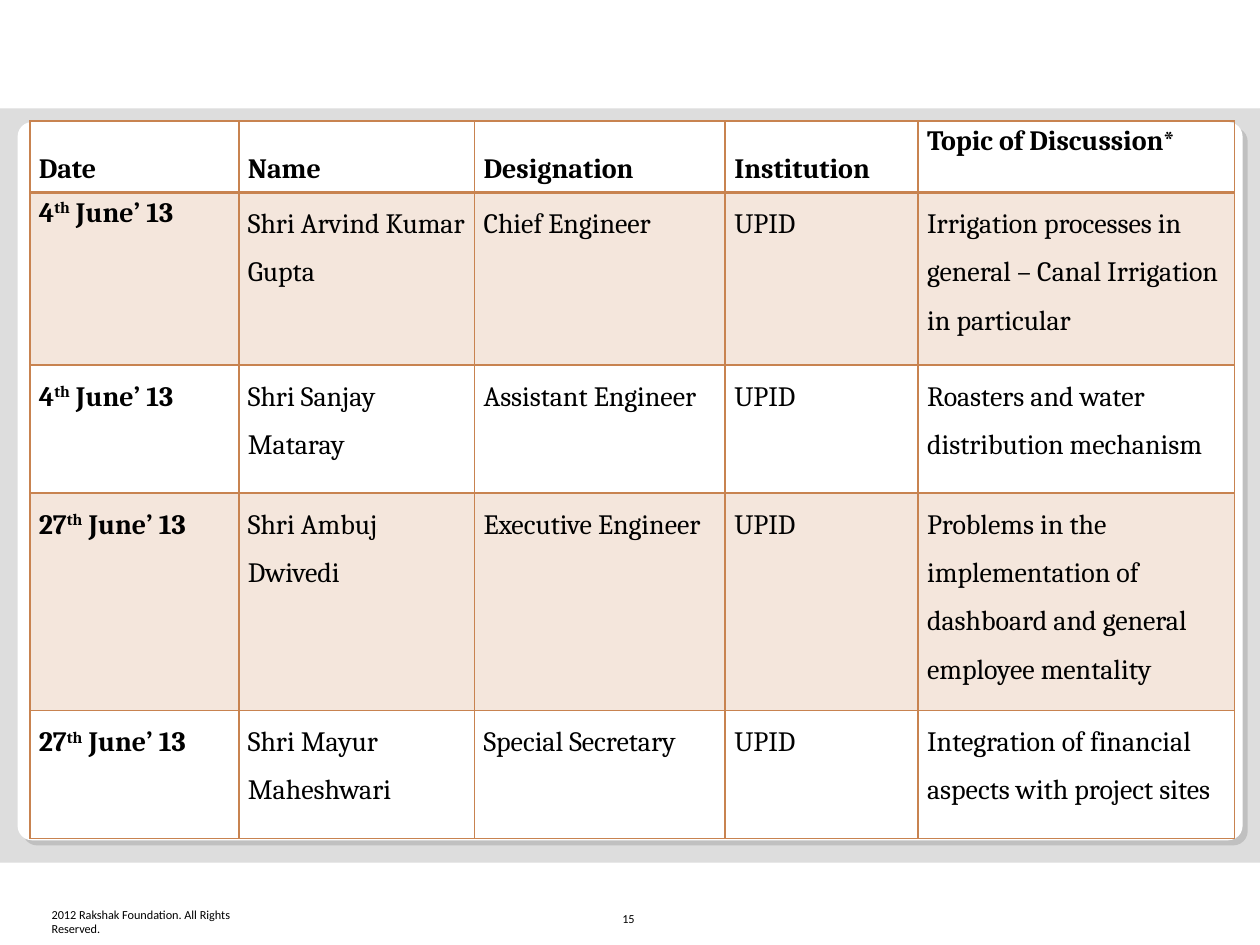
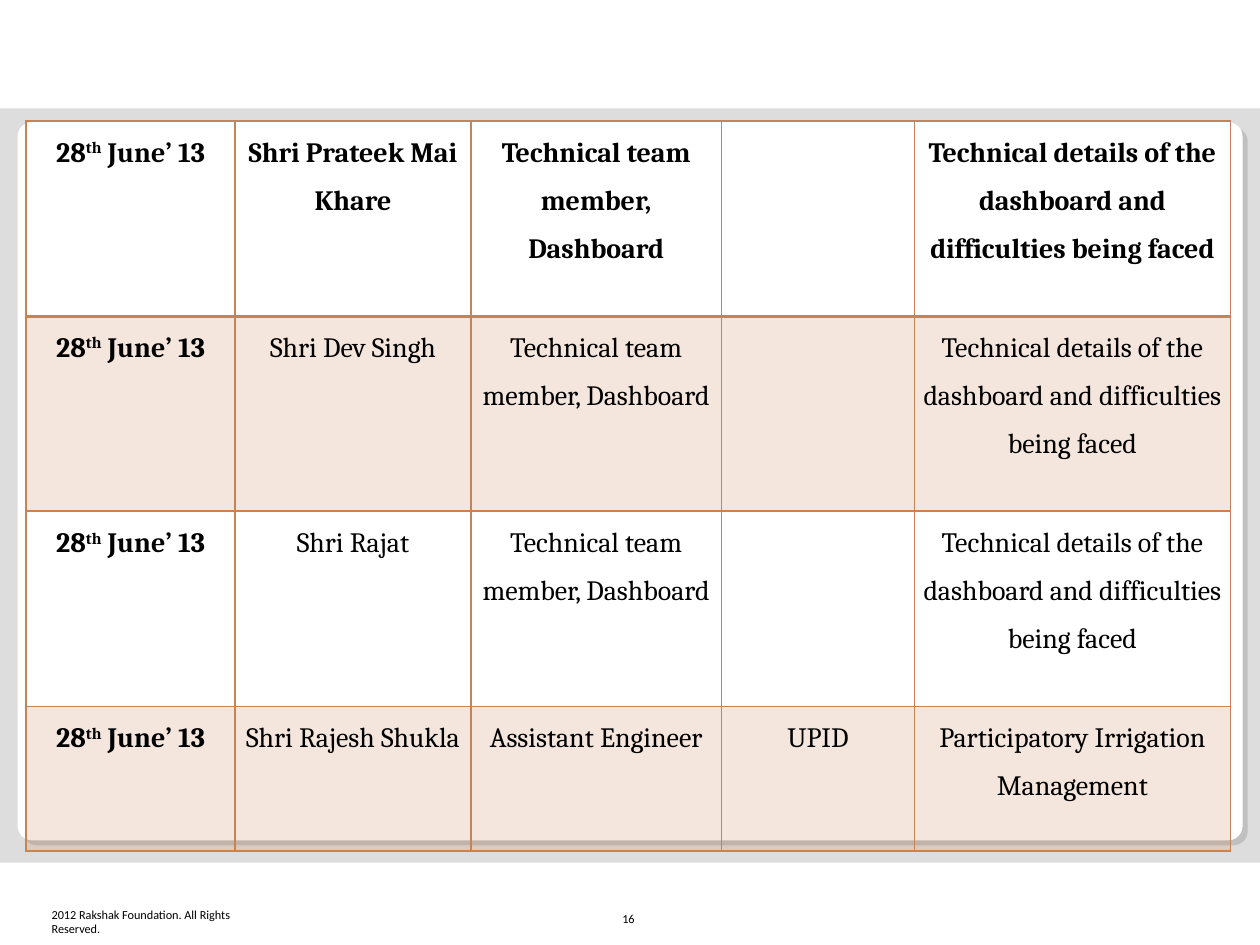
from lxml.etree import SubElement
from pptx import Presentation
from pptx.dml.color import RGBColor
from pptx.enum.shapes import MSO_SHAPE
from pptx.enum.text import MSO_ANCHOR, PP_ALIGN
from pptx.oxml.ns import qn
from pptx.util import Pt

GREY, SHADE, WHITE, BLACK, RUST = "DDDDDD", "C0C0C0", "FFFFFF", "000000", "C88350"
SMALL = {"name": "Calibri", "size": Pt(7)}
BODY = {"name": "Cambria", "size": Pt(16)}
SPAN = [119.5, 134.65, 143.3, 110.2, 180.7]
TECH = "Technical team member, Dashboard"
DETAIL = "Technical details of the dashboard and difficulties being faced"

# Text between carets is raised.
FIRST = [
    ["Date", "Name", "Designation", "Institution", "Topic of Discussion*"],
    ["4^th^ June’ 13", "Shri Arvind Kumar Gupta", "Chief Engineer", "UPID",
     "Irrigation processes in general – Canal Irrigation in particular"],
    ["4^th^ June’ 13", "Shri Sanjay Mataray", "Assistant Engineer", "UPID",
     "Roasters and water distribution mechanism"],
    ["27^th^ June’ 13", "Shri Ambuj Dwivedi", "Executive Engineer", "UPID",
     "Problems in the implementation of dashboard and general employee mentality"],
    ["27^th^ June’ 13", "Shri Mayur Maheshwari", "Special Secretary", "UPID",
     "Integration of financial aspects with project sites"],
]
SECOND = [["28^th^ June’ 13", *rest] for rest in (
    ["Shri Prateek Mai Khare", TECH, "", DETAIL],
    ["Shri Dev Singh", TECH, "", DETAIL],
    ["Shri Rajat", TECH, "", DETAIL],
    ["Shri Rajesh Shukla", "Assistant Engineer", "UPID",
     "Participatory Irrigation Management"],
)]


def ink(code):
    return RGBColor.from_string(code)


def apply(item, values):
    for key, value in values.items():
        setattr(item, key, value)


class Deck:
    def __init__(self):
        self.file = Presentation()
        apply(self.file, {"slide_width": Pt(720), "slide_height": Pt(540)})
        self.slide = None

    def page(self, number):
        """Add a slide with the shared panel, footer and page number."""
        self.slide = self.file.slides.add_slide(self.file.slide_layouts[6])
        self.block(MSO_SHAPE.RECTANGLE, (0, 62, 720, 431), GREY)
        for left, top, code in ((13, 72.7, SHADE), (10.1, 69.8, WHITE)):
            card = self.block(MSO_SHAPE.ROUNDED_RECTANGLE, (left, top, 700, 410.4), code)
            card.adjustments[0] = 0.02
        self.label("2012 Rakshak Foundation. All Rights Reserved.",
                   (29.5, 518, 118.8, 17), 0, 0)
        self.label(str(number), (348.5, 508.3, 23, 24.5), 7.2, 3.6)

    def block(self, kind, box, code):
        shape = self.slide.shapes.add_shape(kind, *map(Pt, box))
        shape.shadow.inherit = False
        shape.fill.solid()
        shape.fill.fore_color.rgb = ink(code)
        shape.line.fill.background()
        return shape

    def label(self, text, box, side, edge):
        frame = self.slide.shapes.add_textbox(*map(Pt, box)).text_frame
        apply(frame, {"word_wrap": True, "vertical_anchor": MSO_ANCHOR.BOTTOM,
                      "margin_left": Pt(side), "margin_right": Pt(side),
                      "margin_top": Pt(edge), "margin_bottom": Pt(edge)})
        self.words(frame.paragraphs[0], text, SMALL)

    def words(self, para, text, look):
        """Add text as runs, raising each part between carets."""
        for place, part in enumerate(text.split("^")):
            run = para.add_run()
            run.text = part
            apply(run.font, look)
            run.font.color.rgb = ink(BLACK)
            if place % 2:
                run.font._element.set("baseline", "30000")

    def table(self, left, rows, highs, align, gaps=None, sides=None):
        """Draw rows; gaps and sides give line spacing and alignment by (row, column)."""
        gaps, sides = gaps or {}, sides or {}
        grid = self.slide.shapes.add_table(
            len(rows), len(SPAN), Pt(left), Pt(69.1), Pt(sum(SPAN)), Pt(sum(highs))).table
        apply(grid, {"first_row": False, "horz_banding": False})
        for column, wide in zip(grid.columns, SPAN):
            column.width = Pt(wide)
        for r, (row, high) in enumerate(zip(rows, highs)):
            grid.rows[r].height = Pt(high)
            for c, text in enumerate(row):
                cell = grid.cell(r, c)
                apply(cell, {"margin_left": Pt(5.2), "margin_right": Pt(5.2),
                             "margin_top": 0, "margin_bottom": 0})
                self.frame(cell, r)
                self.tint(cell, r % 2)
                if text:
                    para = cell.text_frame.paragraphs[0]
                    apply(para, {"alignment": sides.get((r, c), align),
                                 "line_spacing": gaps.get((r, c), 1.5)})
                    self.words(para, text, {**BODY, "bold": r == 0 or c == 0})

    def frame(self, cell, row):
        """Rule all four sides, with a heavier line under the top row."""
        heavy = {0: "lnB", 1: "lnT"}.get(row)
        for tag in ("lnL", "lnR", "lnT", "lnB"):
            wide = Pt(2 if tag == heavy else 1)
            line = SubElement(cell._tc.get_or_add_tcPr(), qn("a:" + tag), w=str(wide))
            fill = SubElement(line, qn("a:solidFill"))
            SubElement(fill, qn("a:srgbClr"), val=RUST)

    def tint(self, cell, banded):
        if not banded:
            cell.fill.background()
            return
        cell.fill.solid()
        cell.fill.fore_color.rgb = ink(RUST)
        color = cell._tc.tcPr.find(qn("a:solidFill")).find(qn("a:srgbClr"))
        SubElement(color, qn("a:alpha"), val="20000")


def main():
    deck = Deck()
    deck.page(15)
    heads = [(0, c) for c in range(4)]
    deck.table(17, FIRST, [40.8, 98.7, 73.2, 124.2, 73.2], PP_ALIGN.LEFT,
               {**dict.fromkeys(heads, 2.0), (0, 4): 1.15, (1, 0): 1.15},
               dict.fromkeys(heads, PP_ALIGN.JUSTIFY))
    deck.page(16)
    deck.table(14.9, SECOND, [111.5] * 3 + [82.8], PP_ALIGN.CENTER)
    deck.file.save("out.pptx")


if __name__ == "__main__":
    main()
